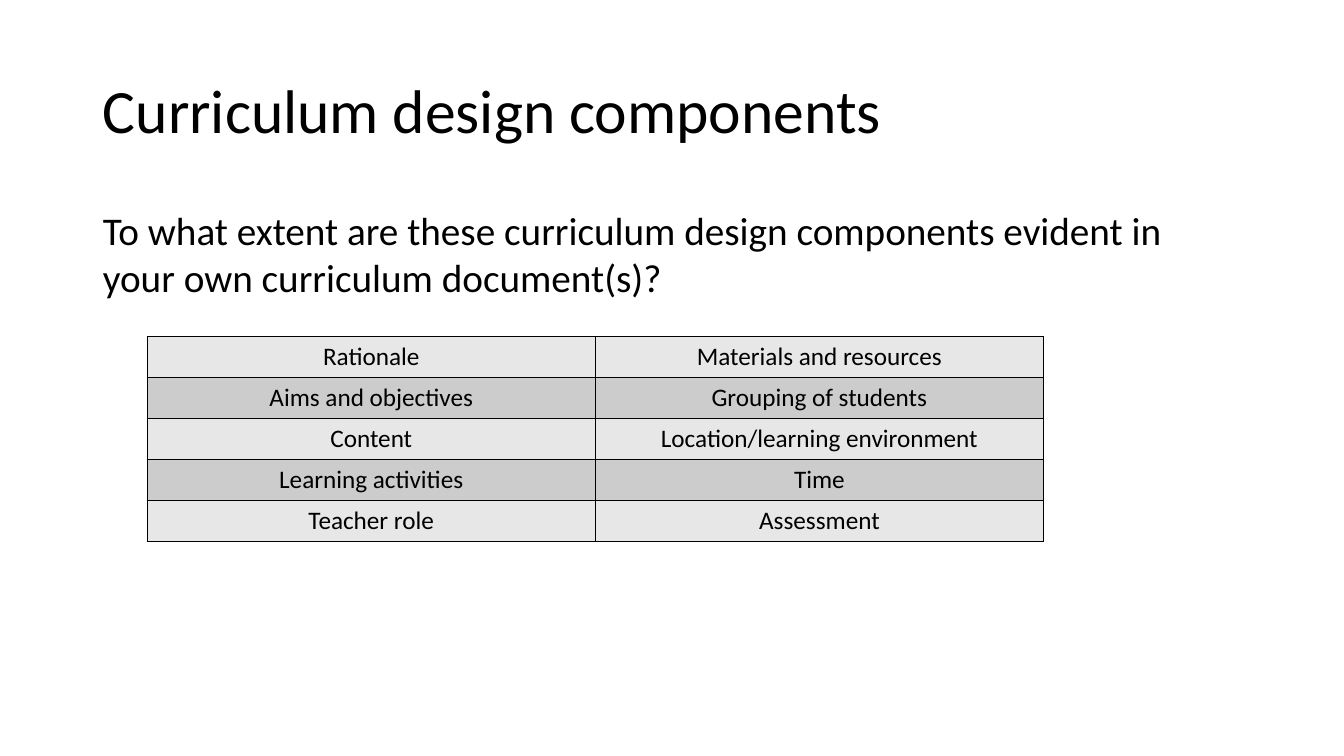
from lxml import etree
from pptx import Presentation
from pptx.dml.color import RGBColor
from pptx.enum.text import MSO_ANCHOR, MSO_AUTO_SIZE, PP_ALIGN
from pptx.oxml.ns import qn
from pptx.util import Inches, Pt

FONT = "Calibri"
BLACK = "000000"
BANDS = ("E7E7E7", "CCCCCC")
COMPONENTS = [
    ("Rationale", "Materials and resources"),
    ("Aims and objectives", "Grouping of students"),
    ("Content", "Location/learning environment"),
    ("Learning activities", "Time"),
    ("Teacher role", "Assessment"),
]


def color(hex_value):
    return RGBColor.from_string(hex_value)


def style(paragraph, size, align):
    paragraph.alignment = align
    paragraph.font.name = FONT
    paragraph.font.size = Pt(size)
    paragraph.font.color.rgb = color(BLACK)


def fill_placeholder(placeholder, box, text, size, anchor):
    """Move a placeholder to the box and give it one left-aligned paragraph."""
    placeholder.left, placeholder.top, placeholder.width, placeholder.height = map(Inches, box)
    frame = placeholder.text_frame
    frame.text = text
    frame.word_wrap = True
    frame.auto_size = MSO_AUTO_SIZE.NONE
    frame.vertical_anchor = anchor
    paragraph = frame.paragraphs[0]
    style(paragraph, size, PP_ALIGN.LEFT)
    return paragraph


def add_heading(slide, box):
    heading = fill_placeholder(slide.shapes.title, box, "Curriculum design components",
                               44, MSO_ANCHOR.MIDDLE)
    heading.line_spacing = 0.9


def add_question(slide, box):
    question = fill_placeholder(
        slide.placeholders[1], box,
        "To what extent are these curriculum design components evident in "
        "your own curriculum document(s)?", 28, MSO_ANCHOR.TOP)
    question.space_before = Pt(10)
    properties = question._p.get_or_add_pPr()
    properties.set("marL", "0")
    properties.set("indent", "0")
    bullet_none = etree.Element(qn("a:buNone"))
    properties.find(qn("a:defRPr")).addprevious(bullet_none)


def add_borders(cell):
    properties = cell._tc.get_or_add_tcPr()
    for position, side in enumerate(("a:lnL", "a:lnR", "a:lnT", "a:lnB")):
        line = etree.Element(qn(side), w=str(Pt(1)))
        solid = etree.SubElement(line, qn("a:solidFill"))
        etree.SubElement(solid, qn("a:srgbClr"), val=BLACK)
        properties.insert(position, line)


def add_components(slide, box):
    table = slide.shapes.add_table(len(COMPONENTS), len(COMPONENTS[0]),
                                   *map(Inches, box)).table
    table.first_row = table.horz_banding = False
    for row, names in enumerate(COMPONENTS):
        for column, name in enumerate(names):
            cell = table.cell(row, column)
            cell.text = name
            style(cell.text_frame.paragraphs[0], 18, PP_ALIGN.CENTER)
            cell.fill.solid()
            cell.fill.fore_color.rgb = color(BANDS[row % 2])
            add_borders(cell)


def main():
    deck = Presentation()
    deck.slide_width, deck.slide_height = Inches(13.33), Inches(7.5)
    slide = deck.slides.add_slide(deck.slide_layouts[1])
    margin, content_width = 0.92, 11.5
    add_heading(slide, (margin, 0.4, content_width, 1.45))
    add_question(slide, (margin, 2, content_width, 4.76))
    add_components(slide, (1.46, 3.34, 8.89, 2.03))
    deck.save("out.pptx")


if __name__ == "__main__":
    main()
